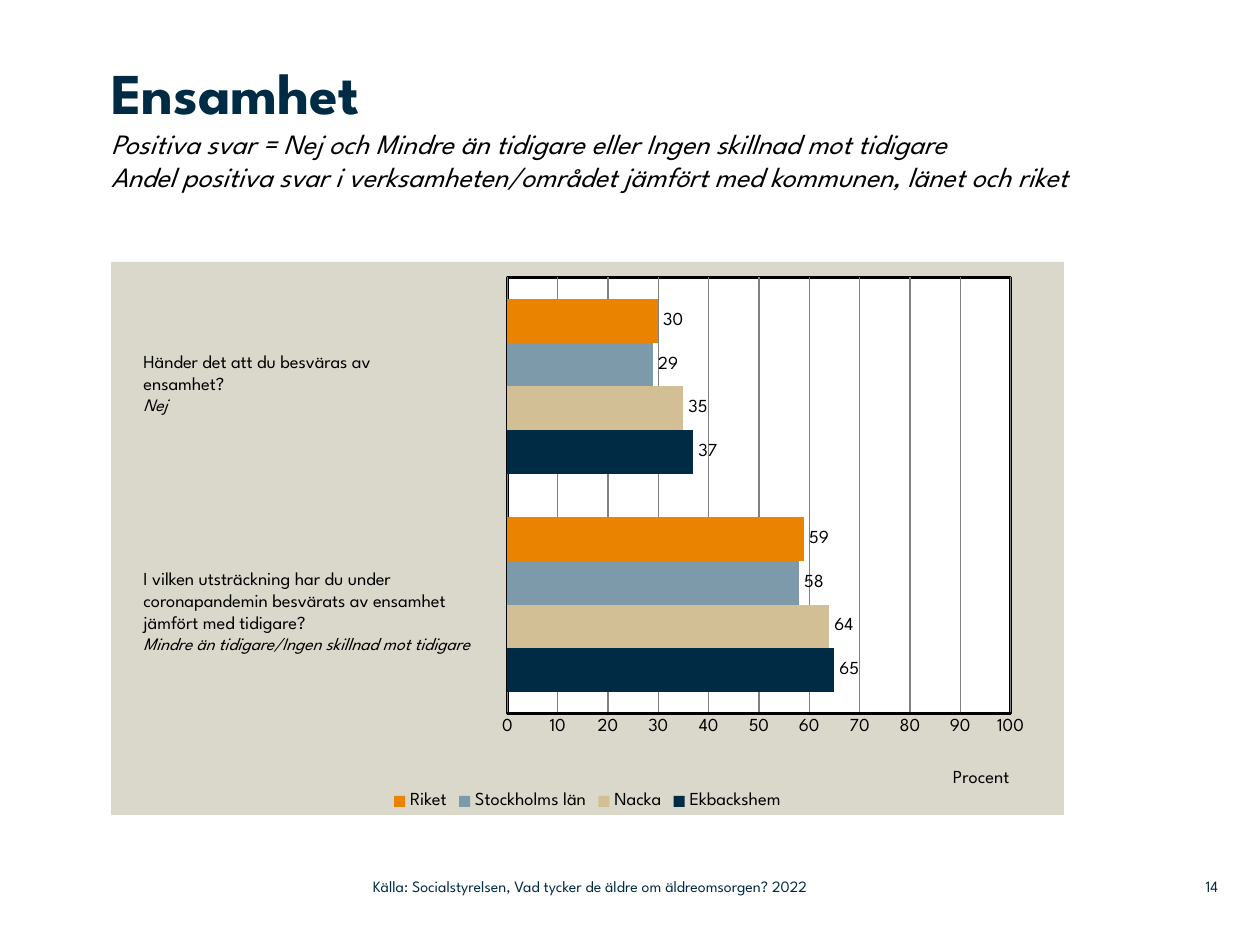
from lxml import etree
from pptx import Presentation
from pptx.chart.data import CategoryChartData
from pptx.dml.color import RGBColor
from pptx.enum.chart import XL_CHART_TYPE as ChartType
from pptx.enum.chart import XL_LABEL_POSITION as LabelPosition
from pptx.enum.chart import XL_LEGEND_POSITION as LegendPosition
from pptx.enum.chart import XL_TICK_MARK as TickMark
from pptx.enum.text import MSO_ANCHOR as Anchor
from pptx.enum.text import PP_ALIGN as Align
from pptx.oxml import parse_xml
from pptx.oxml.ns import qn
from pptx.util import Pt

PX = 914400 // 126
FONT = "League Spartan"
NAVY = RGBColor(0x00, 0x2B, 0x45)
SAND = RGBColor(0xD3, 0xBF, 0x96)
STEEL = RGBColor(0x7D, 0x9A, 0xAA)
ORANGE = RGBColor(0xE9, 0x83, 0x00)
STONE = RGBColor(0xDA, 0xD7, 0xCB)
GREY = RGBColor(0x80, 0x80, 0x80)
BLACK = RGBColor(0, 0, 0)
WHITE = RGBColor(0xFF, 0xFF, 0xFF)
CHART_NS = "http://schemas.openxmlformats.org/drawingml/2006/chart"


def style(font, size, color=BLACK, bold=False, italic=False):
    font.name = FONT
    font.size = Pt(size)
    font.color.rgb = color
    font.bold = bold
    font.italic = italic


def manual_layout(parent, after, **values):
    """Place a chart part by fractions of the chart, after the named child."""
    for old in parent.findall(qn("c:layout")):
        parent.remove(old)
    layout = parse_xml(f'<c:layout xmlns:c="{CHART_NS}"><c:manualLayout/></c:layout>')
    for name, value in values.items():
        etree.SubElement(layout[0], qn(f"c:{name}")).set("val", str(value))
    if after is None:
        parent.insert(0, layout)
    else:
        parent.find(qn(after)).addnext(layout)


deck = Presentation()
deck.slide_width = 1260 * PX
deck.slide_height = 945 * PX
page = deck.slides.add_slide(deck.slide_layouts[5])

# Title with two subtitle lines
title = page.shapes.title
title.left, title.top, title.width, title.height = (n * PX for n in (111, 57, 984, 207))
frame = title.text_frame
frame.word_wrap = True
frame.vertical_anchor = Anchor.TOP
frame.margin_left = frame.margin_right = frame.margin_top = frame.margin_bottom = 0
para = frame.paragraphs[0]
para.alignment = Align.LEFT
span = para.add_run()
span.text = "Ensamhet"
style(span.font, 33, NAVY, bold=True)
for line in (
    "Positiva svar = Nej och Mindre än tidigare eller Ingen skillnad mot tidigare",
    "Andel positiva svar i verksamheten/området jämfört med kommunen, länet och riket",
):
    para.add_line_break()
    span = para.add_run()
    span.text = line
    style(span.font, 16, italic=True)

# Bar chart
SERIES = [
    ("Ekbackshem", (65, 37), NAVY),
    ("Nacka", (64, 35), SAND),
    ("Stockholms län", (58, 29), STEEL),
    ("Riket", (59, 30), ORANGE),
]
data = CategoryChartData()
data.categories = ["1", "2"]
for name, values, _ in SERIES:
    data.add_series(name, values)
chart = page.shapes.add_chart(
    ChartType.BAR_CLUSTERED, 111 * PX, 262 * PX, 953 * PX, 553 * PX, data
).chart
style(chart.font, 10.5)
chart.has_title = False
chart.has_legend = True
chart.legend.position = LegendPosition.BOTTOM
chart.legend.include_in_layout = False
style(chart.legend.font, 10.5)

plot = chart.plots[0]
plot.gap_width = 100
plot.overlap = 0
plot.vary_by_categories = False
for series, (_, _, color) in zip(plot.series, SERIES):
    series.format.fill.solid()
    series.format.fill.fore_color.rgb = color
    labels = series.data_labels
    labels.show_value = True
    labels.position = LabelPosition.OUTSIDE_END
    style(labels.font, 10.5)

chart.category_axis.visible = False
axis = chart.value_axis
axis.minimum_scale = 0
axis.maximum_scale = 100
axis.major_unit = 10
axis.major_tick_mark = axis.minor_tick_mark = TickMark.NONE
axis.format.line.color.rgb = BLACK
axis.format.line.width = Pt(2)
axis.has_major_gridlines = True
axis.major_gridlines.format.line.color.rgb = GREY
axis.major_gridlines.format.line.width = Pt(0.75)
style(axis.tick_labels.font, 10.5)
span = axis.axis_title.text_frame.paragraphs[0].add_run()
span.text = "Procent"
style(span.font, 10.5)
manual_layout(axis.axis_title._element, "c:tx", xMode="edge", yMode="edge", x=0.88, y=0.91)

# Chart and plot backgrounds
space = chart._chartSpace
plot_area = space.chart.plotArea
manual_layout(plot_area, None, layoutTarget="inner", xMode="edge", yMode="edge",
              x=0.416, y=0.028, w=0.528, h=0.789)


def area_format(fill, line):
    return parse_xml(
        f'<c:spPr xmlns:c="{CHART_NS}" xmlns:a="http://schemas.openxmlformats.org/drawingml/2006/main">'
        f'<a:solidFill><a:srgbClr val="{fill}"/></a:solidFill><a:ln w="25400">{line}</a:ln></c:spPr>'
    )


plot_area.append(area_format(WHITE, f'<a:solidFill><a:srgbClr val="{BLACK}"/></a:solidFill>'))
space.chart.addnext(area_format(STONE, "<a:noFill/>"))

# Questions beside the bars: the last line is the answer counted as positive
QUESTIONS = [
    (561, 122, ["I vilken utsträckning har du under coronapandemin besvärats av ensamhet "
                "jämfört med tidigare?", "Mindre än tidigare/Ingen skillnad mot tidigare"]),
    (344, 79, ["Händer det att du besväras av", "ensamhet?", "Nej"]),
]
for top, height, lines in QUESTIONS:
    box = page.shapes.add_textbox(131 * PX, top * PX, 370 * PX, height * PX)
    frame = box.text_frame
    frame.word_wrap = True
    for index, line in enumerate(lines):
        para = frame.add_paragraph() if index else frame.paragraphs[0]
        span = para.add_run()
        span.text = line
        answer = index == len(lines) - 1
        style(span.font, 10 if answer else 10.5, italic=answer)

# Source and page number
for left, width, text, align in (
    (373, 558, "Källa: Socialstyrelsen, Vad tycker de äldre om äldreomsorgen? 2022", Align.LEFT),
    (1159, 59, "14", Align.RIGHT),
):
    box = page.shapes.add_textbox(left * PX, 868 * PX, width * PX, 37 * PX)
    frame = box.text_frame
    frame.word_wrap = True
    frame.vertical_anchor = Anchor.MIDDLE
    frame.margin_left = frame.margin_right = frame.margin_top = frame.margin_bottom = 0
    para = frame.paragraphs[0]
    para.alignment = align
    span = para.add_run()
    span.text = text
    style(span.font, 9, NAVY)

deck.save("out.pptx")
